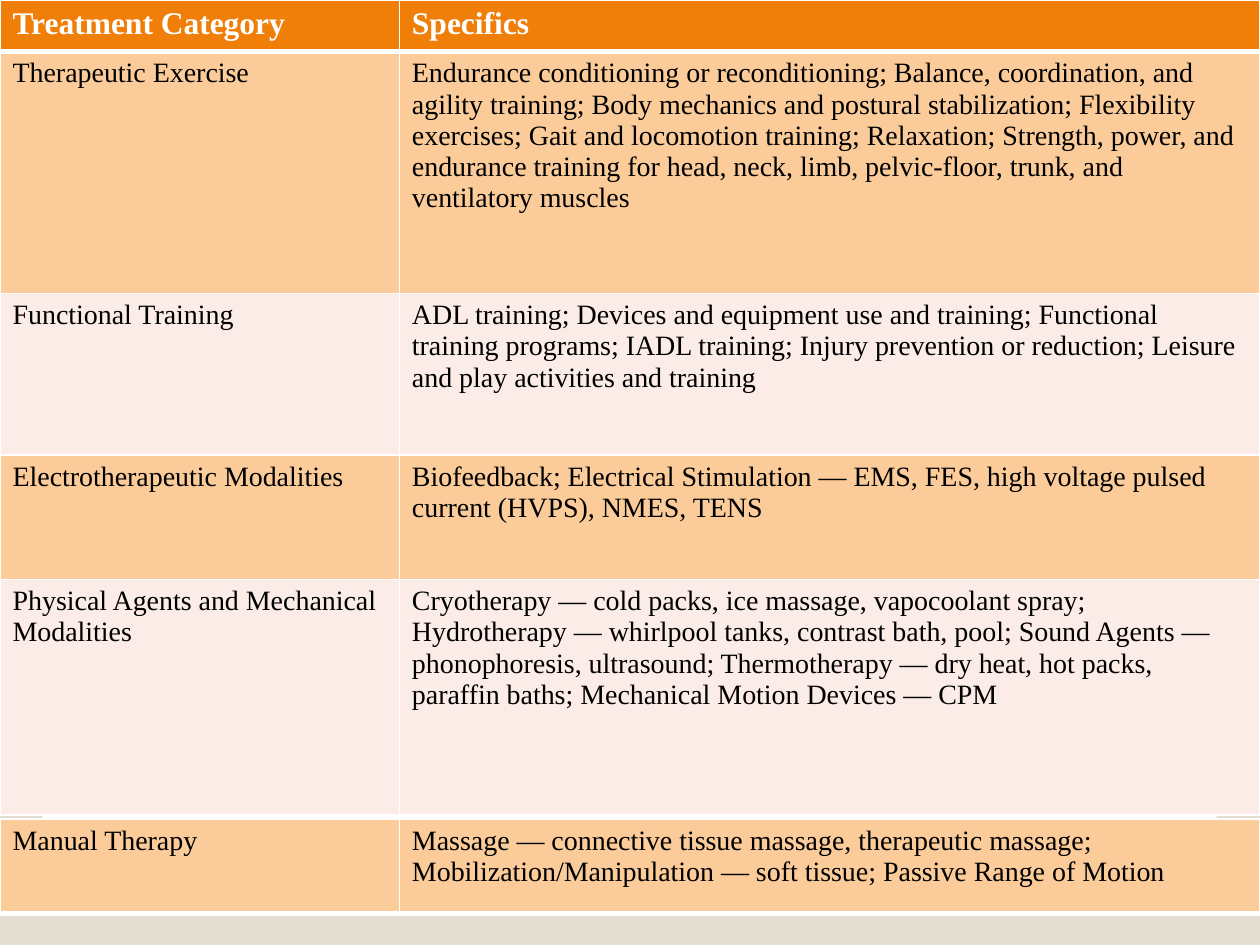
"""Build a slide that tabulates physical therapy treatment categories."""
from dataclasses import dataclass

from lxml import etree
from pptx import Presentation
from pptx.dml.color import RGBColor
from pptx.enum.shapes import MSO_SHAPE
from pptx.oxml.ns import qn
from pptx.util import Inches, Pt

ROUNDED = MSO_SHAPE.ROUNDED_RECTANGLE
BLANK_LAYOUT = 6
COLUMN_WIDTHS = (3.17, 6.83)


@dataclass(frozen=True)
class Theme:
    """Colours, font and sizes of the slide."""
    background: str = "E3DED1"
    panel: str = "FFFFFF"
    panel_line: str = "A4A4A4"
    header: str = "F07F09"
    bands: tuple = ("FBCC9A", "FCECE7")
    border: str = "FFFFFF"
    header_text: str = "FFFFFF"
    body_text: str = "000000"
    font: str = "Times New Roman"
    header_size: int = 18
    body_size: int = 16
    thin: int = 1
    thick: int = 3


THEME = Theme()

HEADINGS = ("Treatment Category", "Specifics")
TREATMENTS = [
    ("Therapeutic Exercise",
     "Endurance conditioning or reconditioning; Balance, coordination, and agility training; "
     "Body mechanics and postural stabilization; Flexibility exercises; Gait and locomotion "
     "training; Relaxation; Strength, power, and endurance training for head, neck, limb, "
     "pelvic-floor, trunk, and ventilatory muscles"),
    ("Functional Training",
     "ADL training; Devices and equipment use and training; Functional training programs; "
     "IADL training; Injury prevention or reduction; Leisure and play activities and training"),
    ("Electrotherapeutic Modalities",
     "Biofeedback; Electrical Stimulation — EMS, FES, high voltage pulsed current (HVPS), "
     "NMES, TENS"),
    ("Physical Agents and Mechanical Modalities",
     "Cryotherapy — cold packs, ice massage, vapocoolant spray; Hydrotherapy — whirlpool "
     "tanks, contrast bath, pool; Sound Agents — phonophoresis, ultrasound; Thermotherapy — "
     "dry heat, hot packs, paraffin baths; Mechanical Motion Devices — CPM"),
]
MANUAL_THERAPY = (
    "Manual Therapy",
    "Massage — connective tissue massage, therapeutic massage; Mobilization/Manipulation — "
    "soft tissue; Passive Range of Motion")


def rgb(value):
    """Return the colour for a hex string."""
    return RGBColor.from_string(value)


def write_text(frame, text, size=THEME.body_size, color=THEME.body_text, bold=False):
    """Write one formatted run into a text frame."""
    run = frame.paragraphs[0].add_run()
    run.text = text
    run.font.name = THEME.font
    run.font.size = Pt(size)
    run.font.bold = bold
    run.font.color.rgb = rgb(color)


def set_borders(cell, bottom):
    """Give a cell thin borders and a bottom border of the given width."""
    properties = cell._tc.get_or_add_tcPr()
    for index, side in enumerate(("lnL", "lnR", "lnT", "lnB")):
        width = bottom if side == "lnB" else THEME.thin
        line = etree.Element(qn(f"a:{side}"), w=str(Pt(width)))
        fill = etree.SubElement(line, qn("a:solidFill"))
        etree.SubElement(fill, qn("a:srgbClr"), val=THEME.border)
        properties.insert(index, line)


def fill_row(table, index, texts, fill, bottom=THEME.thin, **text_format):
    """Write and colour the cells of one table row."""
    for cell, text in zip(table.rows[index].cells, texts):
        cell.fill.solid()
        cell.fill.fore_color.rgb = rgb(fill)
        set_borders(cell, bottom)
        write_text(cell.text_frame, text, **text_format)


def add_table(slide, top, row_heights):
    """Add a full-width table with the shared columns."""
    table = slide.shapes.add_table(
        len(row_heights), len(COLUMN_WIDTHS), Inches(0), Inches(top),
        Inches(sum(COLUMN_WIDTHS)), Inches(sum(row_heights))).table
    for column, width in zip(table.columns, COLUMN_WIDTHS):
        column.width = Inches(width)
    for row, height in zip(table.rows, row_heights):
        row.height = Inches(height)
    return table


def add_panel(slide):
    """Add the rounded white panel behind the tables."""
    panel = slide.shapes.add_shape(
        ROUNDED, Inches(0.33), Inches(0.36), Inches(9.33), Inches(6.78))
    panel.adjustments[0] = 0.02
    panel.shadow.inherit = False
    panel.fill.solid()
    panel.fill.fore_color.rgb = rgb(THEME.panel)
    panel.line.color.rgb = rgb(THEME.panel_line)
    panel.line.width = Pt(0.16)


def main():
    """Build and save the slide."""
    deck = Presentation()
    deck.slide_width, deck.slide_height = Inches(10), Inches(7.5)
    slide = deck.slides.add_slide(deck.slide_layouts[BLANK_LAYOUT])
    slide.background.fill.solid()
    slide.background.fill.fore_color.rgb = rgb(THEME.background)
    add_panel(slide)

    treatments = add_table(slide, 0, (0.41, 1.92, 1.28, 0.99, 1.87))
    fill_row(treatments, 0, HEADINGS, THEME.header, bottom=THEME.thick,
             size=THEME.header_size, color=THEME.header_text, bold=True)
    for index, treatment in enumerate(TREATMENTS):
        fill_row(treatments, index + 1, treatment, THEME.bands[index % 2])

    manual = add_table(slide, 6.5, (0.75,))
    fill_row(manual, 0, MANUAL_THERAPY, THEME.bands[0], bottom=THEME.thick)

    deck.save("out.pptx")


if __name__ == "__main__":
    main()
